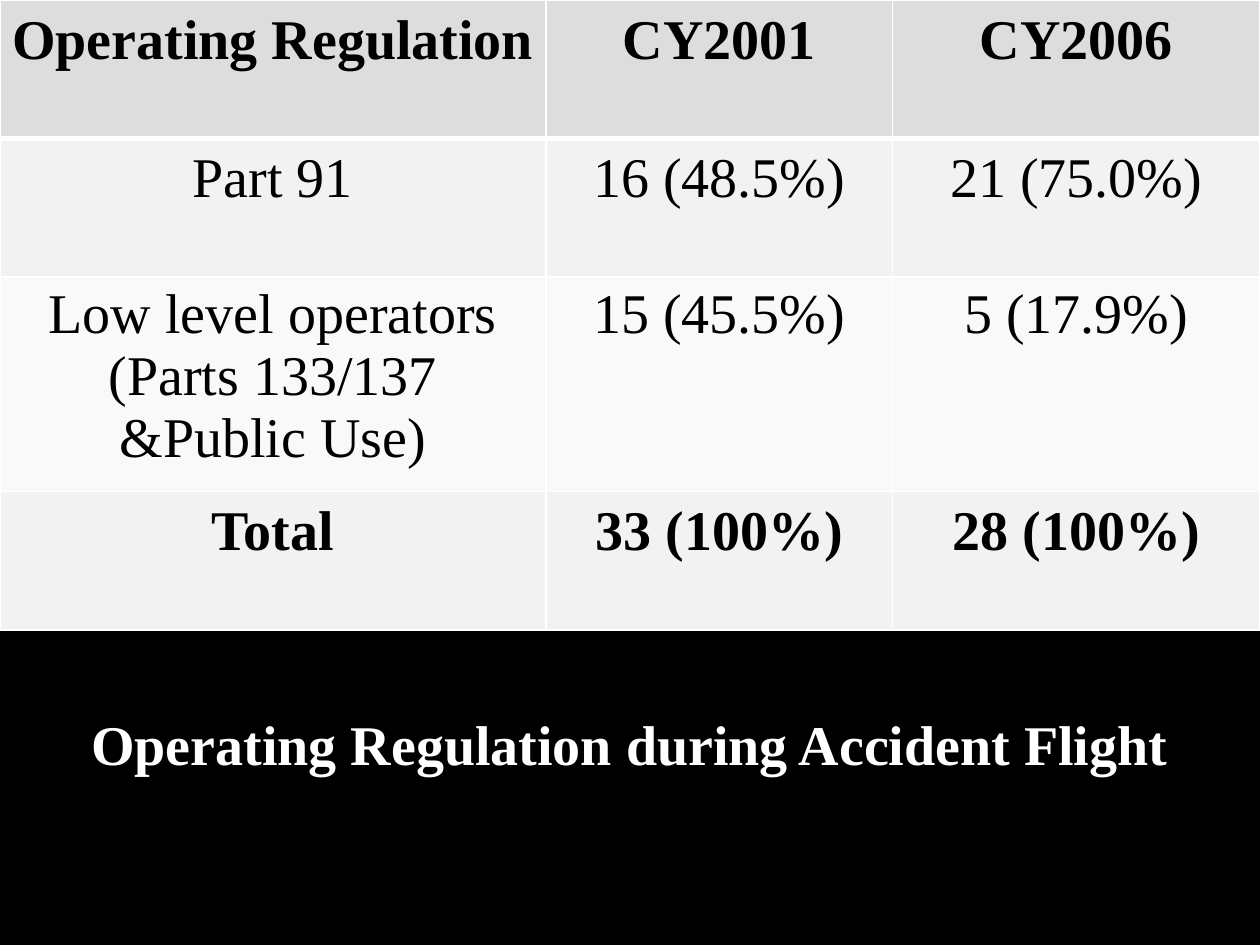
"""Build a slide with a table of accident flights by operating regulation."""
from lxml.etree import SubElement
from pptx import Presentation
from pptx.dml.color import RGBColor
from pptx.enum.text import MSO_ANCHOR, MSO_AUTO_SIZE, PP_ALIGN
from pptx.oxml.ns import qn
from pptx.util import Pt

HEADER, BAND, LIGHT = "DDDDDD", "F2F2F2", "F9F9F9"
COLUMN_WIDTHS = [312, 198, 210]
ROWS = [
    (["Operating Regulation", "CY2001", "CY2006"], 79.2, HEADER, True),
    (["Part 91", "16 (48.5%)", "21 (75.0%)"], 79.2, BAND, False),
    (["Low level operators\n(Parts 133/137 &Public Use)", "15 (45.5%)", "5 (17.9%)"],
     122.4, LIGHT, False),
    (["Total", "33 (100%)", "28 (100%)"], 79.2, BAND, True),
]


def paint(color_format, color):
    color_format.rgb = RGBColor.from_string(color)


def write(frame, text, font="Times New Roman", size=32, color="000000", bold=False, spacing=None):
    frame.word_wrap = True
    for index, line in enumerate(text.split("\n")):
        para = frame.add_paragraph() if index else frame.paragraphs[0]
        para.alignment = PP_ALIGN.CENTER
        para.line_spacing = spacing
        span = para.add_run()
        span.text = line
        span.font.name = font
        span.font.size = Pt(size)
        span.font.bold = bold
        paint(span.font.color, color)


class SlideBuilder:
    def __init__(self, deck, background="000000", border="FFFFFF"):
        self.border = border
        self.page = deck.slides.add_slide(deck.slide_layouts[5])
        fill = self.page.background.fill
        fill.solid()
        paint(fill.fore_color, background)

    def title(self, text, left, top, width, height):
        box = self.page.shapes.title
        box.left, box.top, box.width, box.height = map(Pt, (left, top, width, height))
        frame = box.text_frame
        frame.auto_size = MSO_AUTO_SIZE.NONE
        frame.vertical_anchor = MSO_ANCHOR.TOP
        write(frame, text, color="FFFFFF", bold=True)

    def borders(self, cell, top=1, bottom=1):
        properties = cell._tc.get_or_add_tcPr()
        widths = {"a:lnL": 1, "a:lnR": 1, "a:lnT": top, "a:lnB": bottom}
        for index, (tag, width) in enumerate(widths.items()):
            line = SubElement(properties, qn(tag), w=str(Pt(width)))
            SubElement(SubElement(line, qn("a:solidFill")), qn("a:srgbClr"), val=self.border)
            properties.insert(index, line)

    def table(self, rows, column_widths, left, top):
        heights = [height for _, height, _, _ in rows]
        frame = self.page.shapes.add_table(
            len(rows), len(column_widths), Pt(left), Pt(top), Pt(sum(column_widths)), Pt(sum(heights)))
        table = frame.table
        for column, width in zip(table.columns, column_widths):
            column.width = Pt(width)
        for index, (texts, height, color, bold) in enumerate(rows):
            table.rows[index].height = Pt(height)
            for cell, text in zip(table.rows[index].cells, texts):
                cell.fill.solid()
                paint(cell.fill.fore_color, color)
                self.borders(cell, top=3 if index == 1 else 1, bottom=3 if index == 0 else 1)
                if color != LIGHT:
                    cell.margin_left = cell.margin_right = Pt(5)
                    cell.margin_top = cell.margin_bottom = Pt(0)
                write(cell.text_frame, text, bold=bold, spacing=None if color == LIGHT else 1.15)


def main():
    deck = Presentation()
    deck.slide_width, deck.slide_height = Pt(720), Pt(540)
    builder = SlideBuilder(deck)
    builder.table(ROWS, COLUMN_WIDTHS, 0, 0)
    builder.title("Operating Regulation during Accident Flight", 0, 402, 720, 46)
    deck.save("out.pptx")


if __name__ == "__main__":
    main()
